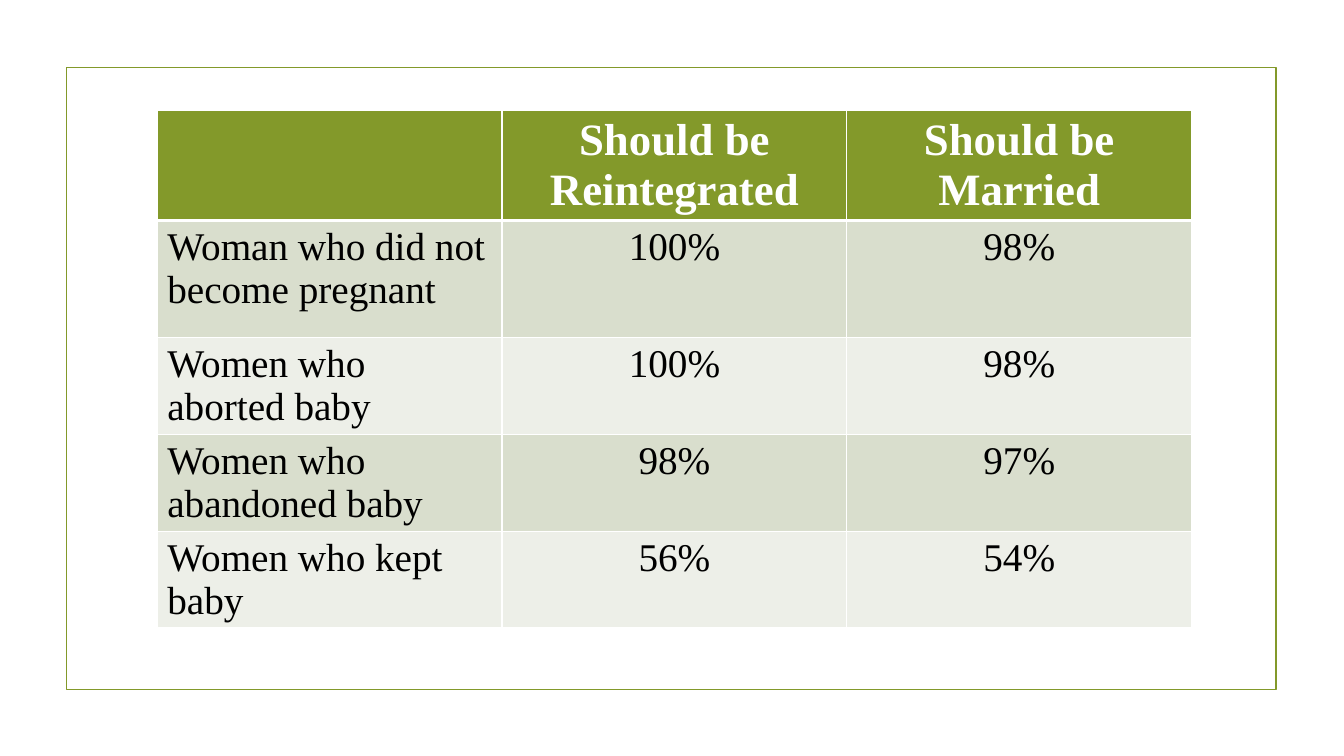
from lxml import etree
from pptx import Presentation
from pptx.dml.color import RGBColor
from pptx.enum.shapes import MSO_SHAPE
from pptx.enum.text import PP_ALIGN
from pptx.oxml.ns import qn
from pptx.util import Inches, Pt

RECTANGLE = MSO_SHAPE.RECTANGLE
LEFT, CENTER = PP_ALIGN.LEFT, PP_ALIGN.CENTER

GREEN, WHITE, BLACK = "83992A", "FFFFFF", "000000"
BANDS = ("D9DECD", "EDEFE8")
FONT = "Times New Roman"

ROWS = [
    ("", "Should be Reintegrated", "Should be Married"),
    ("Woman who did not become pregnant", "100%", "98%"),
    ("Women who aborted baby", "100%", "98%"),
    ("Women who abandoned baby", "98%", "97%"),
    ("Women who kept baby", "56%", "54%"),
]
ROW_HEIGHTS = (1.08, 1.16, 0.96, 0.96, 0.96)
COLUMN_WIDTH = 3.42
HEADER_FORMAT = {"name": FONT, "size": Pt(32), "bold": True}
BODY_FORMAT = {"name": FONT, "size": Pt(28), "bold": False}


def rgb(color):
    return RGBColor.from_string(color)


def set_borders(cell, widths):
    """Draw white cell borders; widths maps each side tag to points."""
    properties = cell._tc.get_or_add_tcPr()
    for side, width in widths.items():
        border = etree.SubElement(properties, qn(f"a:{side}"), w=str(Pt(width)))
        fill = etree.SubElement(border, qn("a:solidFill"))
        etree.SubElement(fill, qn("a:srgbClr"), val=WHITE)


def add_frame(slide):
    frame = slide.shapes.add_shape(
        RECTANGLE, Inches(0.66), Inches(0.67), Inches(12), Inches(6.17))
    frame.shadow.inherit = False
    frame.fill.background()
    frame.line.color.rgb = rgb(GREEN)
    frame.line.width = Pt(1.25)


def add_opinion_table(slide):
    column_count = len(ROWS[0])
    table = slide.shapes.add_table(
        len(ROWS), column_count, Inches(1.56), Inches(1.1),
        Inches(COLUMN_WIDTH * column_count), Inches(sum(ROW_HEIGHTS))).table
    for column in table.columns:
        column.width = Inches(COLUMN_WIDTH)
    for r, (texts, height) in enumerate(zip(ROWS, ROW_HEIGHTS)):
        table.rows[r].height = Inches(height)
        is_header = r == 0
        background = GREEN if is_header else BANDS[(r - 1) % 2]
        text_format = HEADER_FORMAT if is_header else BODY_FORMAT
        borders = {"lnL": 1, "lnR": 1, "lnT": 3 if r == 1 else 1,
                   "lnB": 3 if is_header else 1}
        for c, text in enumerate(texts):
            cell = table.cell(r, c)
            set_borders(cell, borders)
            cell.fill.solid()
            cell.fill.fore_color.rgb = rgb(background)
            cell.text = text
            paragraph = cell.text_frame.paragraphs[0]
            paragraph.alignment = CENTER if is_header or c else LEFT
            for run in paragraph.runs:
                for attribute, value in text_format.items():
                    setattr(run.font, attribute, value)
                run.font.color.rgb = rgb(WHITE if is_header else BLACK)


def main():
    presentation = Presentation()
    presentation.slide_width = Inches(13.33)
    presentation.slide_height = Inches(7.5)
    slide = presentation.slides.add_slide(presentation.slide_layouts[6])
    add_frame(slide)
    add_opinion_table(slide)
    presentation.save("out.pptx")


if __name__ == "__main__":
    main()
